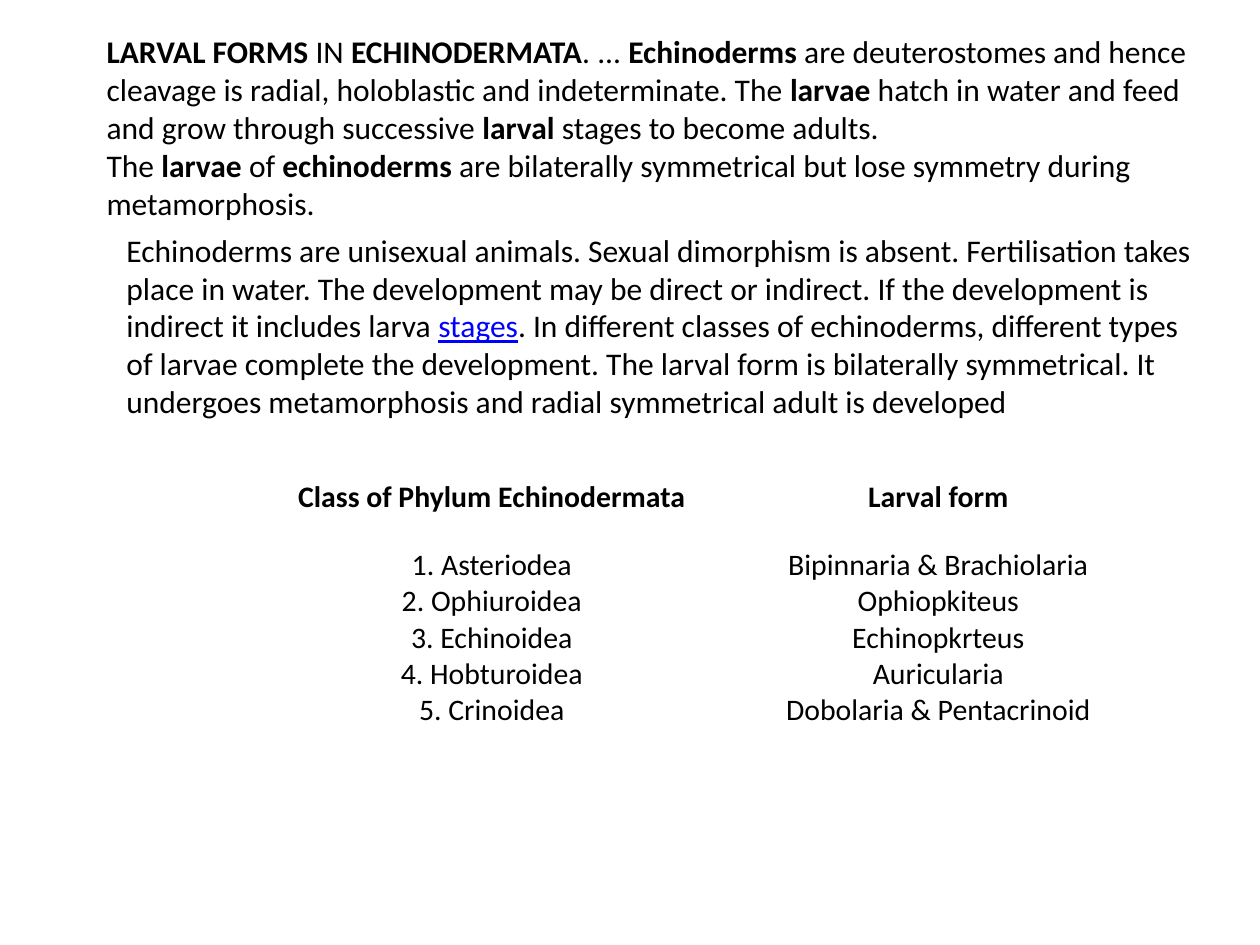
from dataclasses import dataclass

from pptx import Presentation
from pptx.dml.color import RGBColor
from pptx.enum.text import MSO_AUTO_SIZE, PP_ALIGN
from pptx.util import Cm, Pt

FIT_TEXT = MSO_AUTO_SIZE.SHAPE_TO_FIT_TEXT
CENTER = PP_ALIGN.CENTER


@dataclass(frozen=True)
class Theme:
    font: str = "Calibri"
    ink: RGBColor = RGBColor(0, 0, 0)
    link: RGBColor = RGBColor(0, 0, 255)
    paper: RGBColor = RGBColor(255, 255, 255)
    body: Pt = Pt(18)
    cell: Pt = Pt(17)


THEME = Theme()
PLAIN = {"name": THEME.font, "size": THEME.body, "bold": False}
BOLD = {**PLAIN, "bold": True}
LINKED = {**PLAIN, "underline": True}
CELL = {**PLAIN, "size": THEME.cell}
HEADING = {**CELL, "bold": True}

# In the passages, * switches the emphasis on and off, ~ is a no-break space
NO_BREAK = chr(160)
LARVAE_PASSAGE = (
    "*LARVAL FORMS*~IN~*ECHINODERMATA*. ...~*Echinoderms*~are deuterostomes "
    "and hence cleavage is radial, holoblastic and indeterminate. The~*larvae*"
    "~hatch in water and feed and grow through successive~*larval*~stages to "
    "become adults. The~*larvae*~of~*echinoderms*~are bilaterally symmetrical "
    "but lose symmetry during metamorphosis."
)
DEVELOPMENT_PASSAGE = (
    "Echinoderms are unisexual animals. Sexual dimorphism is absent. "
    "Fertilisation takes place in water. The development may be direct or "
    "indirect. If the development is indirect it includes larva~*stages*. In "
    "different classes of echinoderms, different types of larvae complete the "
    "development. The larval form is bilaterally symmetrical. It undergoes "
    "metamorphosis and radial symmetrical adult is developed"
)
LARVAL_FORMS = {
    "Class of Phylum Echinodermata": [
        "1. Asteriodea", "2. Ophiuroidea", "3. Echinoidea",
        "4. Hobturoidea", "5. Crinoidea",
    ],
    "Larval form": [
        "Bipinnaria & Brachiolaria", "Ophiopkiteus", "Echinopkrteus",
        "Auricularia", "Dobolaria & Pentacrinoid",
    ],
}


def add_run(paragraph, words, style, color=THEME.ink):
    run = paragraph.add_run()
    run.text = words.replace("~", NO_BREAK)
    for attribute, value in style.items():
        setattr(run.font, attribute, value)
    run.font.color.rgb = color


def add_passage(slide, box, passage, emphasis, emphasis_color=THEME.ink):
    frame = slide.shapes.add_textbox(*map(Cm, box)).text_frame
    frame.word_wrap = True
    frame.auto_size = FIT_TEXT
    for index, words in enumerate(passage.split("*")):
        if not words:
            continue
        if index % 2:
            add_run(frame.paragraphs[0], words, emphasis, emphasis_color)
        else:
            add_run(frame.paragraphs[0], words, PLAIN)


def fill_cell(cell, lines, style):
    cell.fill.solid()
    cell.fill.fore_color.rgb = THEME.paper
    for side in ("left", "right", "top", "bottom"):
        setattr(cell, f"margin_{side}", Cm(0.13))
    frame = cell.text_frame
    for index, line in enumerate(lines):
        paragraph = frame.add_paragraph() if index else frame.paragraphs[0]
        paragraph.alignment = CENTER
        add_run(paragraph, line, style)


def add_larval_table(slide, box, class_width, heading_height):
    left, top, width, height = box
    table = slide.shapes.add_table(2, len(LARVAL_FORMS), *map(Cm, box)).table
    table.first_row = table.horz_banding = False
    for column, size in zip(table.columns, (class_width, width - class_width)):
        column.width = Cm(size)
    for row, size in zip(table.rows, (heading_height, height - heading_height)):
        row.height = Cm(size)
    for index, (heading, entries) in enumerate(LARVAL_FORMS.items()):
        fill_cell(table.cell(0, index), [heading], HEADING)
        fill_cell(table.cell(1, index), entries, CELL)


def main():
    deck = Presentation()
    deck.slide_width, deck.slide_height = Cm(25.4), Cm(19.05)
    slide = deck.slides.add_slide(deck.slide_layouts[6])

    # Two passages above the table of classes and larvae
    add_passage(slide, (1.9, 0.53, 22.6, 4.11), LARVAE_PASSAGE, BOLD)
    add_passage(slide, (2.3, 4.53, 22.2, 4.11), DEVELOPMENT_PASSAGE,
                LINKED, THEME.link)
    add_larval_table(slide, (5.7, 9.53, 18, 7.8),
                     class_width=8.43, heading_height=1.37)

    deck.save("out.pptx")


if __name__ == "__main__":
    main()
